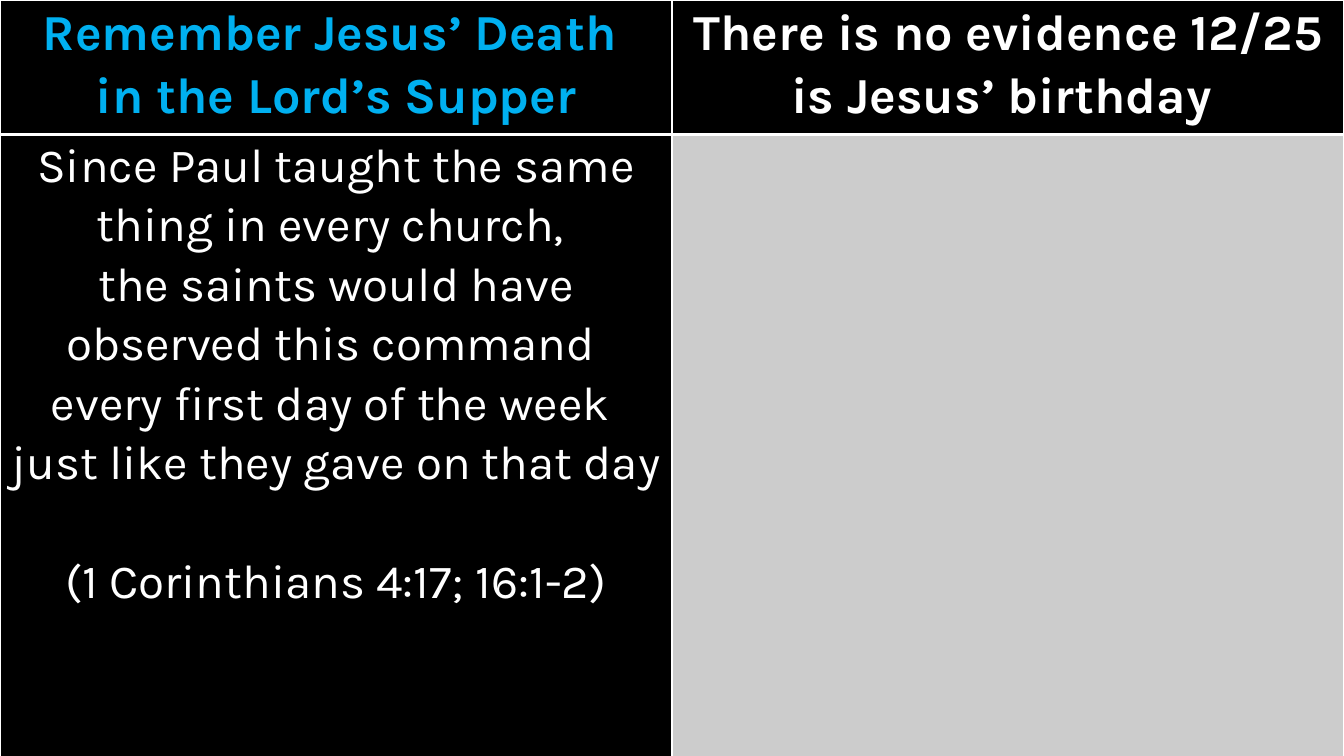
from lxml import etree
from pptx import Presentation, util as u
from pptx.dml.color import RGBColor
from pptx.enum import text
from pptx.oxml import ns

BLACK = RGBColor(0x00, 0x00, 0x00)
WHITE = RGBColor(0xFF, 0xFF, 0xFF)
BLUE = RGBColor(0x00, 0xB0, 0xF0)
GREY = RGBColor(0xCC, 0xCC, 0xCC)

WIDTH, HEIGHT = u.Cm(33.87), u.Cm(19.05)
ROW_HEIGHTS = [u.Cm(3.39), u.Cm(16.93)]
THIN, THICK = u.Pt(1), u.Pt(3)
HEADER_BORDERS = {"lnL": THIN, "lnR": THIN, "lnT": THIN, "lnB": THICK}
BODY_BORDERS = {"lnL": THIN, "lnR": THIN, "lnT": THICK, "lnB": THIN}

HEADER_FONT = {"name": "Karla", "size": u.Pt(36), "bold": True}
BODY_FONT = {"name": "Karla", "size": u.Pt(34), "bold": False}
PARAGRAPH = {"alignment": text.PP_ALIGN.CENTER, "line_spacing": 1.07}
MARGINS = {"margin_left": u.Cm(0.18), "margin_right": u.Cm(0.18),
           "margin_top": 0, "margin_bottom": 0}

SUPPER_TITLE = ["Remember Jesus’ Death ", "in the Lord’s Supper"]
BIRTHDAY_TITLE = ["There is no evidence 12/25 is Jesus’ birthday "]
SUPPER_POINTS = [
    "Since Paul taught the same thing in every church, ",
    "the saints would have observed this command ",
    "every first day of the week ",
    "just like they gave on that day",
    "(1 Corinthians 4:17; 16:1-2)",
]
REFERENCE_GAP = u.Pt(42.5)


def apply(target, values):
    for name, value in values.items():
        setattr(target, name, value)


class ComparisonSlide:
    def __init__(self, deck):
        self.slide = deck.slides.add_slide(deck.slide_layouts[6])
        fill = self.slide.background.fill
        fill.solid()
        fill.fore_color.rgb = BLACK

    def table(self, columns, row_heights):
        frame = self.slide.shapes.add_table(
            len(row_heights), columns, 0, 0, WIDTH, sum(row_heights))
        table = frame.table
        for row, height in zip(table.rows, row_heights):
            row.height = height
        return table

    def cell(self, cell, lines, font, color, fill, borders):
        apply(cell, MARGINS)
        cell.fill.solid()
        cell.fill.fore_color.rgb = fill
        self.borders(cell, borders)
        for index, line in enumerate(lines):
            frame = cell.text_frame
            para = frame.add_paragraph() if index else frame.paragraphs[0]
            apply(para, PARAGRAPH)
            span = para.add_run()
            span.text = line
            apply(span.font, font)
            span.font.color.rgb = color

    def borders(self, cell, widths):
        """Put white border lines ahead of the fill, as the schema orders them."""
        properties = cell._tc.get_or_add_tcPr()
        for index, (side, width) in enumerate(widths.items()):
            line = etree.Element(ns.qn(f"a:{side}"), w=str(width))
            solid = etree.SubElement(line, ns.qn("a:solidFill"))
            etree.SubElement(solid, ns.qn("a:srgbClr"), val=str(WHITE))
            properties.insert(index, line)


def main():
    deck = Presentation()
    deck.slide_width, deck.slide_height = WIDTH, HEIGHT
    page = ComparisonSlide(deck)
    table = page.table(2, ROW_HEIGHTS)

    for column, (title, color) in enumerate(
            [(SUPPER_TITLE, BLUE), (BIRTHDAY_TITLE, WHITE)]):
        page.cell(table.cell(0, column), title, HEADER_FONT, color,
                  BLACK, HEADER_BORDERS)
    for column, (points, fill) in enumerate(
            [(SUPPER_POINTS, BLACK), ([], GREY)]):
        page.cell(table.cell(1, column), points, BODY_FONT, WHITE,
                  fill, BODY_BORDERS)

    reference = table.cell(1, 0).text_frame.paragraphs[-1]
    reference.space_before = REFERENCE_GAP
    deck.save("out.pptx")


if __name__ == "__main__":
    main()
